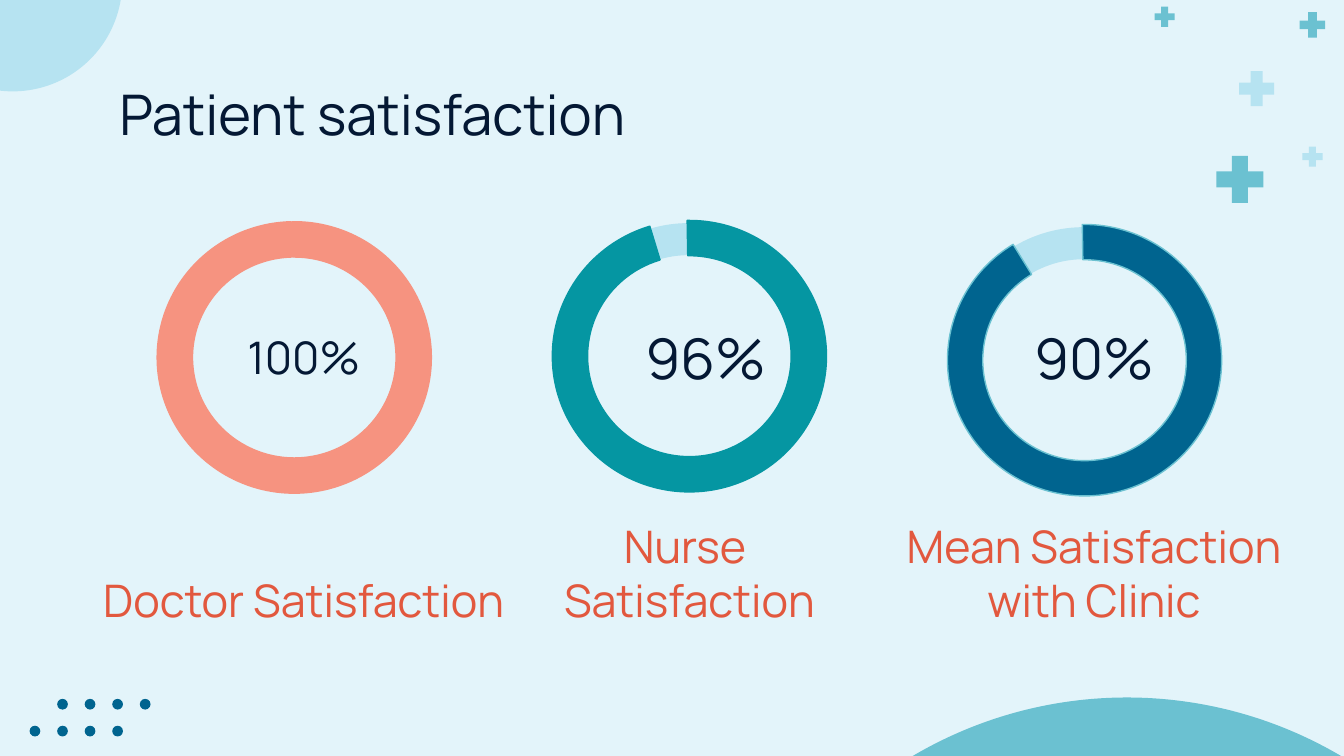
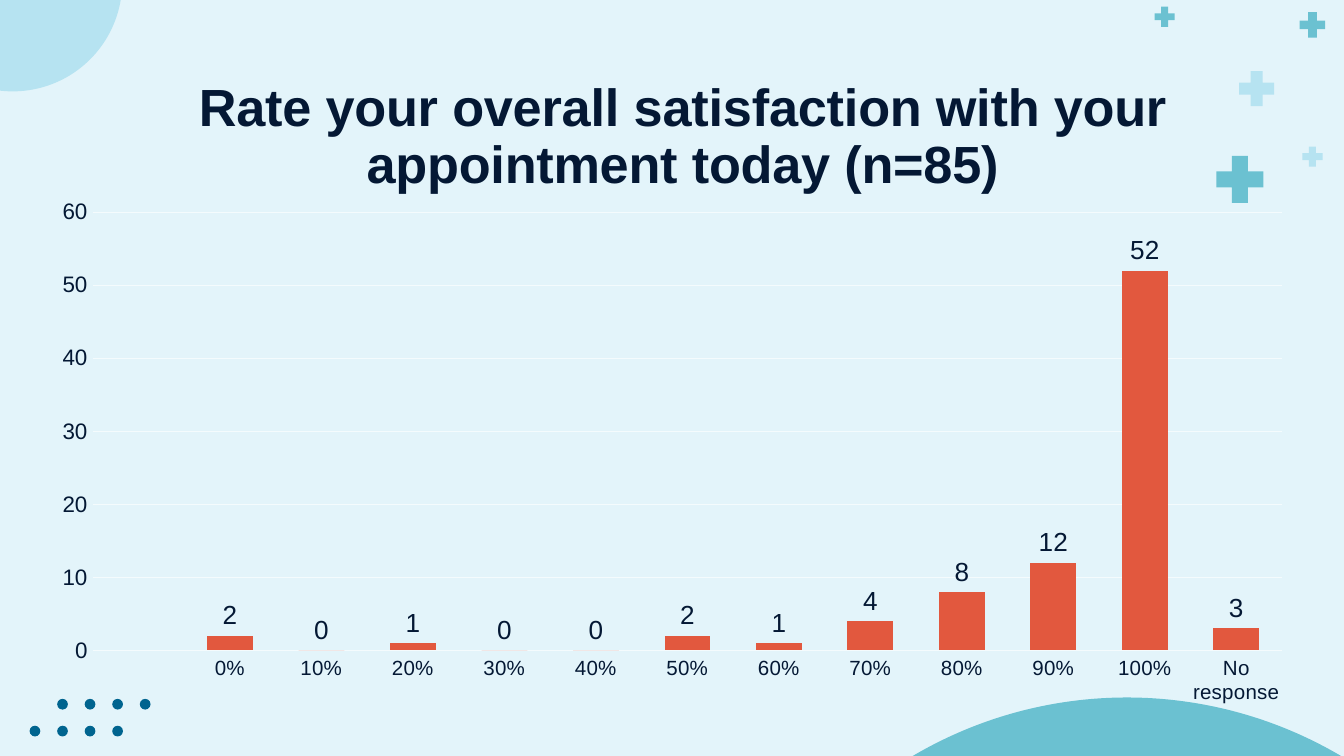
import dataclasses

import pptx
import pptx.chart.data
import pptx.dml.color
import pptx.enum.chart
import pptx.enum.shapes
import pptx.enum.text
import pptx.oxml
import pptx.util

Inches = pptx.util.Inches
Pt = pptx.util.Pt
SHAPE = pptx.enum.shapes.MSO_SHAPE
ANCHOR = pptx.enum.text.MSO_ANCHOR
ALIGN = pptx.enum.text.PP_ALIGN
CHART_NS = "http://schemas.openxmlformats.org/drawingml/2006/chart"


@dataclasses.dataclass(frozen=True)
class Theme:
    """Colours, fonts and type sizes shared by the slides."""

    paper: str = "E3F4FA"
    ink: str = "041834"
    pale: str = "B6E3F1"
    aqua: str = "6BC1D1"
    navy: str = "00648F"
    teal: str = "0596A2"
    salmon: str = "F69380"
    coral: str = "E2583E"
    grid: str = "F4FBFD"
    font: str = "Manrope"
    chart_font: str = "Arial"
    title: int = 30
    label: int = 24
    chart_title: int = 28
    data_label: int = 14
    value_axis: int = 12
    category_axis: int = 11
    chart_base: int = 10


THEME = Theme()


def rgb(value):
    """Return a colour object for a hex string."""
    return pptx.dml.color.RGBColor.from_string(value)


def apply(obj, **values):
    """Set each named attribute on an object."""
    for name, value in values.items():
        setattr(obj, name, value)


def style_font(font, size, color=THEME.ink, name=THEME.chart_font, bold=False):
    """Format a font."""
    apply(font, size=Pt(size), name=name, bold=bold)
    font.color.rgb = rgb(color)


def style_line(line, color, width=0.75):
    """Give a line a colour and width, or hide it."""
    if color is None:
        line.fill.background()
    else:
        line.color.rgb = rgb(color)
        line.width = Pt(width)


def add_figure(s, kind, box, fill, line=None, adjustments=()):
    """Add a flat preset shape."""
    sp = s.shapes.add_shape(kind, *map(Inches, box))
    sp.shadow.inherit = False
    sp.fill.solid()
    sp.fill.fore_color.rgb = rgb(fill)
    style_line(sp.line, line)
    for i, value in enumerate(adjustments):
        sp.adjustments[i] = value
    return sp


def add_text(s, box, text, size, color=THEME.ink, anchor=ANCHOR.MIDDLE, align=ALIGN.CENTER):
    """Add a wrapped text box with one paragraph per line of text."""
    tf = s.shapes.add_textbox(*map(Inches, box)).text_frame
    margins = dict.fromkeys(("margin_left", "margin_top", "margin_right", "margin_bottom"), Inches(0.1))
    apply(tf, word_wrap=True, vertical_anchor=anchor, **margins)
    for i, line in enumerate(text.split("\n")):
        p = tf.add_paragraph() if i else tf.paragraphs[0]
        p.alignment = align
        r = p.add_run()
        r.text = line
        style_font(r.font, size, color, THEME.font)


def add_corner_circles(s):
    """Place the two large circles that run off the slide corners."""
    add_figure(s, SHAPE.OVAL, (-0.72, -0.95, 1.63, 1.63), THEME.pale)
    add_figure(s, SHAPE.OVAL, (5.25, 5.19, 6.27, 6.27), THEME.aqua)


def add_dots(s, left, top, size=0.08):
    """Place two staggered rows of four dots."""
    step = 0.41 / 2
    for row in range(2):
        for col in range(4):
            x = left + (col + 1 - row) * step
            add_figure(s, SHAPE.OVAL, (x, top + row * 0.2, size, size), THEME.navy)


def add_pluses(s, left, top):
    """Scatter the plus signs from the corner of their region."""
    pluses = (
        (1.08, 0.04, 0.19, THEME.aqua),
        (0.46, 1.11, 0.35, THEME.aqua),
        (0, 0, 0.15, THEME.aqua),
        (0.63, 0.48, 0.26, THEME.pale),
        (1.1, 1.04, 0.15, THEME.pale),
    )
    for dx, dy, size, color in pluses:
        add_figure(s, SHAPE.CROSS, (left + dx, top + dy, size, size), color, adjustments=(0.33,))


def add_base_slide(prs):
    """Add a blank slide with the shared decoration."""
    s = prs.slides.add_slide(prs.slide_layouts[6])
    add_corner_circles(s)
    add_dots(s, 0.22, 5.2)
    add_pluses(s, 8.59, 0.05)
    return s


def add_gauge(s, left, top, start, color, line):
    """Draw a pale ring under an arc whose start is given in degrees."""
    add_figure(s, SHAPE.DONUT, (left + 0.01, top + 0.02, 2.01, 1.99), THEME.pale, adjustments=(0.12,))
    arc = add_figure(s, SHAPE.BLOCK_ARC, (left, top, 2.04, 2.02), color, line,
                     (start * 0.6, 270.95 * 0.6, 0.13))
    arc.element.spPr.xfrm.set("flipH", "1")


def build_satisfaction(prs):
    """Build the slide with three satisfaction gauges."""
    s = add_base_slide(prs)
    add_text(s, (0.79, 0.49, 8.43, 0.63), "Patient satisfaction", THEME.title,
             anchor=ANCHOR.TOP, align=ALIGN.LEFT)
    gauges = (
        (1.65, 271.61, THEME.salmon, THEME.salmon, 0.58, "Doctor Satisfaction", 1.54, "100%", THEME.label),
        (1.64, 286.93, THEME.teal, THEME.teal, 3.45, "Nurse \nSatisfaction", 4.53, "96%", THEME.title),
        (1.67, 301.67, THEME.navy, THEME.aqua, 6.46, "Mean Satisfaction with Clinic", 7.42, "90%", THEME.title),
    )
    for i, (top, start, color, line, label_x, label, value_x, value, size) in enumerate(gauges):
        add_gauge(s, 1.17 + i * 2.94, top, start, color, line)
        add_text(s, (label_x, 4.03, 3.36, 0.73), label, THEME.label, THEME.coral, ANCHOR.BOTTOM)
        add_text(s, (value_x, 2.36, 1.44, 0.59), value, size)


def place_part(parent, index, parts):
    """Fix the position of a chart part."""
    for old in parent.xpath("./c:layout"):
        parent.remove(old)
    values = "".join(f'<c:{name} val="{value}"/>' for name, value in parts.items())
    parent.insert(index, pptx.oxml.parse_xml(
        f'<c:layout xmlns:c="{CHART_NS}"><c:manualLayout>{values}</c:manualLayout></c:layout>'))


def place_chart_parts(chart, width, height):
    """Place the title and plot, in inches from the chart corner."""
    edge = {"xMode": "edge", "yMode": "edge"}
    title = chart.element.xpath("./c:chart/c:title")[0]
    place_part(title, 1, edge | {"x": 1.14 / width, "y": 0.19 / height})
    plot = {"x": 0.42 / width, "y": 1.29 / height, "w": 8.85 / width, "h": 3.26 / height}
    place_part(chart.element.xpath(".//c:plotArea")[0], 0, {"layoutTarget": "inner"} | edge | plot)


def style_axes(chart):
    """Format the category and value axes."""
    none = pptx.enum.chart.XL_TICK_MARK.NONE
    cat, val = chart.category_axis, chart.value_axis
    for axis, size, color in ((cat, THEME.category_axis, THEME.grid), (val, THEME.value_axis, None)):
        apply(axis, major_tick_mark=none, minor_tick_mark=none)
        style_font(axis.tick_labels.font, size)
        style_line(axis.format.line, color)
    cat.has_major_gridlines = False
    apply(val, has_major_gridlines=True, minimum_scale=0, maximum_scale=60, major_unit=10)
    style_line(val.major_gridlines.format.line, THEME.grid)


def add_rating_chart(s, box):
    """Add the column chart of appointment ratings."""
    data = pptx.chart.data.CategoryChartData()
    data.categories = ["", *(f"{n}%" for n in range(0, 101, 10)), "No response"]
    data.add_series("Series 1", (None, 2, 0, 1, 0, 0, 2, 1, 4, 8, 12, 52, 3))
    kind = pptx.enum.chart.XL_CHART_TYPE.COLUMN_CLUSTERED
    chart = s.shapes.add_chart(kind, *map(Inches, box), data).chart
    apply(chart, has_legend=False, has_title=True)
    style_font(chart.font, THEME.chart_base)
    p = chart.chart_title.text_frame.paragraphs[0]
    r = p.add_run()
    r.text = "Rate your overall satisfaction with your appointment today (n=85)"
    style_font(r.font, THEME.chart_title, bold=True)
    place_chart_parts(chart, *box[2:])
    style_axes(chart)
    plot = chart.plots[0]
    apply(plot, gap_width=100, overlap=-24, vary_by_categories=False)
    series = plot.series[0]
    series.format.fill.solid()
    series.format.fill.fore_color.rgb = rgb(THEME.coral)
    labels = series.data_labels
    apply(labels, show_value=True, position=pptx.enum.chart.XL_LABEL_POSITION.OUTSIDE_END)
    style_font(labels.font, THEME.data_label)


def build_rating(prs):
    """Build the slide with the rating chart."""
    add_rating_chart(add_base_slide(prs), (0.27, 0.29, 9.45, 5.05))


def main():
    """Build and save the presentation."""
    prs = pptx.Presentation()
    apply(prs, slide_width=Inches(10), slide_height=Inches(10) * 9 // 16)
    fill = prs.slide_master.background.fill
    fill.solid()
    fill.fore_color.rgb = rgb(THEME.paper)
    build_satisfaction(prs)
    build_rating(prs)
    prs.save("out.pptx")


if __name__ == "__main__":
    main()
